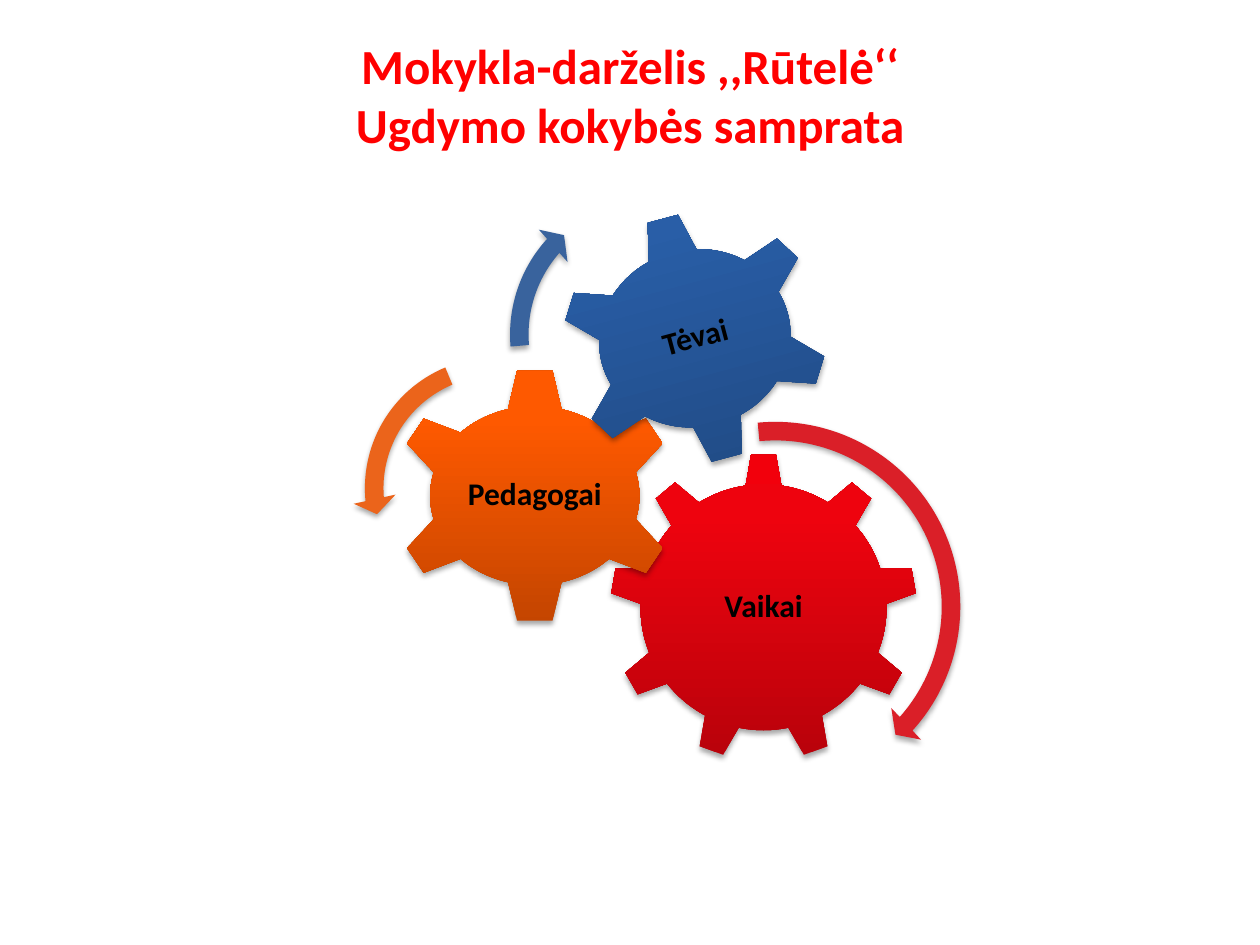
"""Build the slide of three linked gears with turning arrows."""
from copy import deepcopy
from dataclasses import dataclass

from lxml.etree import SubElement
from pptx import Presentation
from pptx.dml.color import RGBColor
from pptx.enum.shapes import MSO_SHAPE
from pptx.enum.text import MSO_ANCHOR, MSO_AUTO_SIZE, PP_ALIGN
from pptx.oxml.ns import qn
from pptx.shapes.autoshape import Shape
from pptx.slide import Slide
from pptx.text.text import TextFrame
from pptx.util import Inches, Pt

COLUMNS, ROWS = 100, 75
SLIDE_WIDTH, SLIDE_HEIGHT = Inches(10), Inches(7.5)


@dataclass(frozen=True)
class Theme:
    """Colours and type sizes of the slide."""
    font: str = "Calibri"
    title_size: int = 28
    label_size: int = 18
    title: str = "FF0000"
    label: str = "000000"
    shadow: str = "000000"
    children: tuple[str, str, str] = ("B8020B", "EE030E", "F2000C")
    teachers: tuple[str, str, str] = ("C44500", "FE5900", "FF5A00")
    parents: tuple[str, str, str] = ("1F4880", "295EA7", "265EAA")
    children_arrow: str = "DA1F28"
    teachers_arrow: str = "EB641B"
    parents_arrow: str = "39639D"


@dataclass(frozen=True)
class Box:
    """A rectangle in grid columns and rows."""
    column: float
    row: float
    columns: float
    rows: float

    def lengths(self) -> tuple[int, int, int, int]:
        """Return left, top, width and height as slide lengths."""
        return (
            round(self.column * SLIDE_WIDTH / COLUMNS),
            round(self.row * SLIDE_HEIGHT / ROWS),
            round(self.columns * SLIDE_WIDTH / COLUMNS),
            round(self.rows * SLIDE_HEIGHT / ROWS),
        )


@dataclass(frozen=True)
class Gear:
    """A labelled gear."""
    label: str
    kind: MSO_SHAPE
    box: Box
    label_box: Box
    colors: tuple[str, str, str]
    rotation: float = 0


@dataclass(frozen=True)
class TurningArrow:
    """A circular arrow with sizes in percent and angles in degrees."""
    kind: MSO_SHAPE
    box: Box
    thickness: float
    head_sweep: float
    head_angle: float
    tail_angle: float
    head_width: float
    color: str


THEME = Theme()
TITLE_BOX = Box(7.5, 2.3, 85, 14.1)
CHILDREN_BOX = Box(48.4, 36, 24.4, 24.4)
TEACHERS_BOX = Box(31.1, 29.2, 22.7, 20.3)
GEARS = (
    Gear("Vaikai", MSO_SHAPE.GEAR_9, CHILDREN_BOX, CHILDREN_BOX, THEME.children),
    Gear("Pedagogai", MSO_SHAPE.GEAR_6, TEACHERS_BOX, TEACHERS_BOX, THEME.teachers),
    Gear("Tėvai", MSO_SHAPE.GEAR_6, Box(44.5, 16.8, 21.3, 20.1),
         Box(49.3, 21.1, 11.8, 11.4), THEME.parents, 345),
)
ARROWS = (
    TurningArrow(MSO_SHAPE.CIRCULAR_ARROW, Box(45.9, 32.5, 31.3, 31.3),
                 4.7, 4.98, 41.89, 264.47, 5.5, THEME.children_arrow),
    TurningArrow(MSO_SHAPE.LEFT_CIRCULAR_ARROW, Box(28, 27.4, 22.7, 22.7),
                 6.5, 7.17, 174.82, 247.3, 7.5, THEME.teachers_arrow),
    TurningArrow(MSO_SHAPE.CIRCULAR_ARROW, Box(39.5, 14.3, 24.5, 24.5),
                 6, 6.57, 221.9, 175.14, 7, THEME.parents_arrow),
)


def format_text(frame: TextFrame, size: int, color: str) -> None:
    """Centre the text and apply the bold theme font."""
    for paragraph in frame.paragraphs:
        paragraph.alignment = PP_ALIGN.CENTER
        for run in paragraph.runs:
            run.font.name = THEME.font
            run.font.size = Pt(size)
            run.font.bold = True
            run.font.color.rgb = RGBColor.from_string(color)


def add_soft_shadow(shape: Shape) -> None:
    """Give the shape a soft shadow that falls straight down."""
    shape.shadow.inherit = False
    effects = shape._element.spPr.find(qn("a:effectLst"))
    shadow = SubElement(effects, qn("a:outerShdw"), blurRad=str(Pt(3.1)),
                        dist=str(Pt(1.8)), dir="5400000", rotWithShape="0")
    color = SubElement(shadow, qn("a:srgbClr"), val=THEME.shadow)
    SubElement(color, qn("a:alpha"), val="35000")


def fill_gradient(shape: Shape, colors: tuple[str, str, str]) -> None:
    """Fill the shape with three colours from bottom to top."""
    shape.fill.gradient()
    shape.fill.gradient_angle = 90
    stop_list = shape._element.spPr.find(qn("a:gradFill")).find(qn("a:gsLst"))
    stop_list.append(deepcopy(stop_list[-1]))
    for stop, color, position in zip(shape.fill.gradient_stops, colors, (0, 0.8, 1)):
        stop.color.rgb = RGBColor.from_string(color)
        stop.position = position


def add_title(slide: Slide, text: str) -> None:
    """Place and format the title placeholder."""
    title = slide.shapes.title
    title.left, title.top, title.width, title.height = TITLE_BOX.lengths()
    frame = title.text_frame
    frame.text = text
    frame.auto_size = MSO_AUTO_SIZE.NONE
    frame.vertical_anchor = MSO_ANCHOR.TOP
    format_text(frame, THEME.title_size, THEME.title)


def add_gear(slide: Slide, gear: Gear) -> None:
    """Draw a gear and its label."""
    shape = slide.shapes.add_shape(gear.kind, *gear.box.lengths())
    shape.rotation = gear.rotation
    fill_gradient(shape, gear.colors)
    shape.line.fill.background()
    add_soft_shadow(shape)

    label = slide.shapes.add_textbox(*gear.label_box.lengths())
    label.rotation = gear.rotation
    frame = label.text_frame
    frame.word_wrap = True
    frame.vertical_anchor = MSO_ANCHOR.MIDDLE
    frame.margin_left = frame.margin_right = Inches(0.03)
    frame.margin_top = frame.margin_bottom = Inches(0.03)
    frame.text = gear.label
    frame.paragraphs[0].line_spacing = 0.9
    format_text(frame, THEME.label_size, THEME.label)


def add_turning_arrow(slide: Slide, arrow: TurningArrow) -> None:
    """Draw a circular arrow beside its gear."""
    shape = slide.shapes.add_shape(arrow.kind, *arrow.box.lengths())
    angles = (arrow.head_sweep, arrow.head_angle, arrow.tail_angle)
    values = (arrow.thickness / 100, *(angle * 0.6 for angle in angles),
              arrow.head_width / 100)
    for index, value in enumerate(values):
        shape.adjustments[index] = value
    shape.fill.solid()
    shape.fill.fore_color.rgb = RGBColor.from_string(arrow.color)
    shape.line.fill.background()
    add_soft_shadow(shape)


def main() -> None:
    """Build and save the presentation."""
    presentation = Presentation()
    presentation.slide_width, presentation.slide_height = SLIDE_WIDTH, SLIDE_HEIGHT
    slide = presentation.slides.add_slide(presentation.slide_layouts[5])
    add_title(slide, "Mokykla-darželis ,,Rūtelė‘‘\vUgdymo kokybės samprata")
    for gear in GEARS:
        add_gear(slide, gear)
    for arrow in ARROWS:
        add_turning_arrow(slide, arrow)
    presentation.save("out.pptx")


if __name__ == "__main__":
    main()
